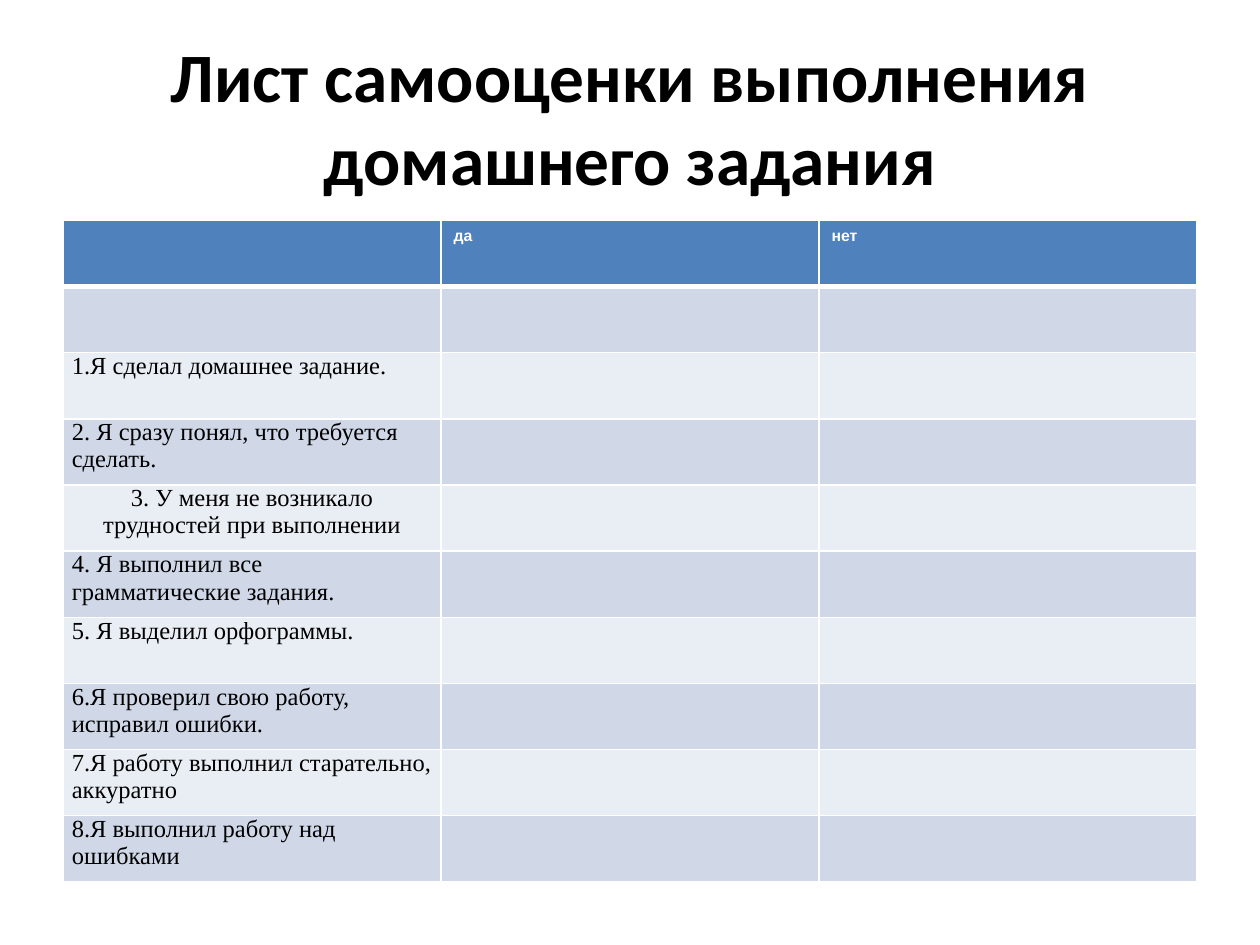
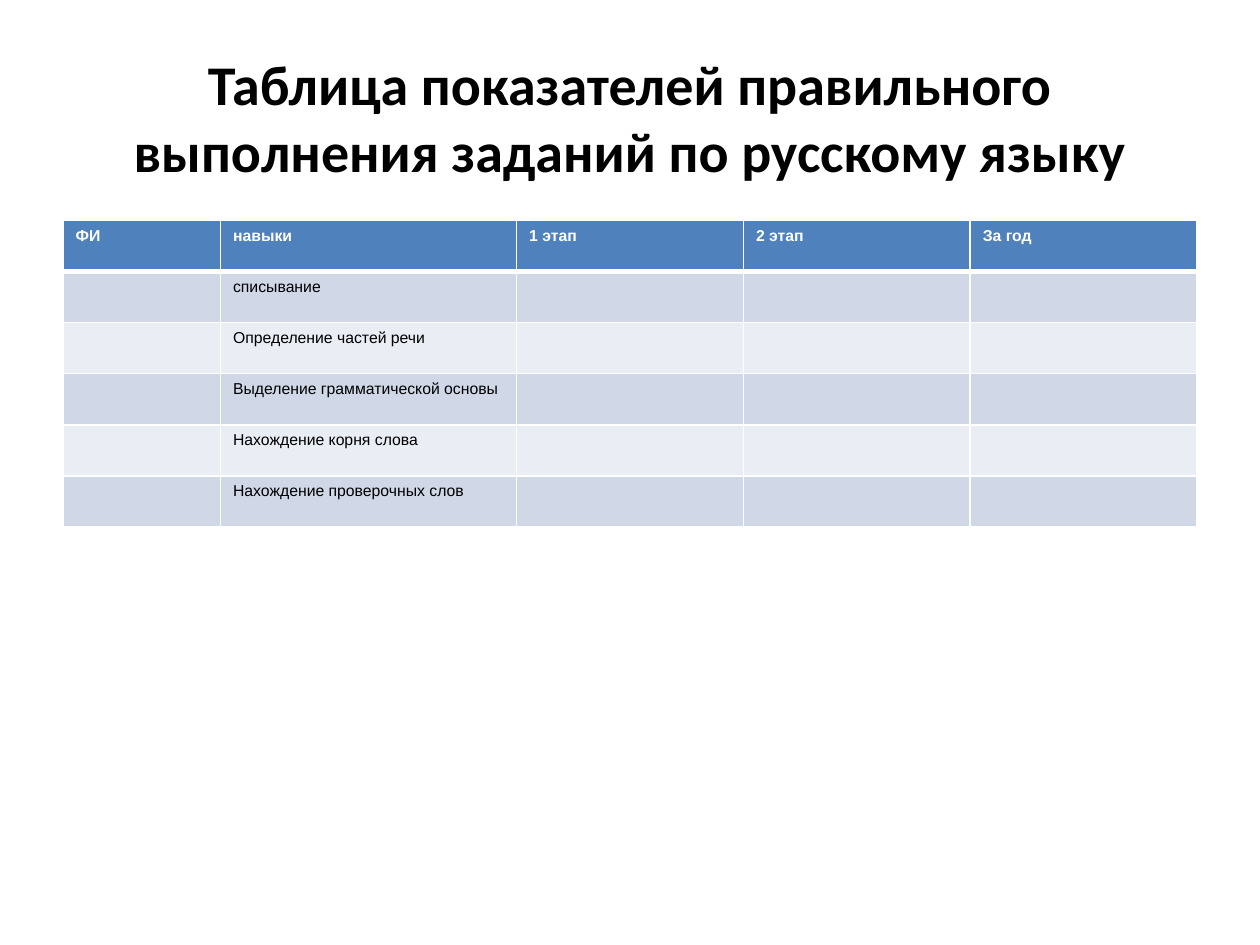
import dataclasses

import lxml.etree
import pptx
import pptx.dml.color
import pptx.enum.text
import pptx.oxml.ns
import pptx.util

Align = pptx.enum.text.PP_ALIGN
Color = pptx.dml.color.RGBColor.from_string
Pt = pptx.util.Pt
Inches = pptx.util.Inches
qn = pptx.oxml.ns.qn


@dataclasses.dataclass(frozen=True)
class Theme:
    white: str = "FFFFFF"
    black: str = "000000"
    head: str = "4F81BD"
    bands: tuple = ("D0D8E8", "E9EDF4")
    thin: float = 1
    thick: float = 3
    title: tuple = ("Calibri", "000000", True)
    label: tuple = ("Arial", "FFFFFF", True)
    plain: tuple = ("Arial", "000000", False)
    serif: tuple = ("Times New Roman", "000000", False)
    small: float = 9
    medium: float = 14
    large: float = 32
    huge: float = 39.6


THEME = Theme()
UNIT = Inches(0.05)
TITLE_BOX = (10, 6, 180, 25)
TABLE_BOX = (10, 35, 180)

CHECKS = [
    "1.Я сделал домашнее задание.",
    "2. Я сразу понял, что требуется сделать.",
    "3. У меня не возникало трудностей при выполнении",
    "4. Я выполнил все грамматические задания.",
    "5. Я выделил орфограммы.",
    "6.Я проверил свою работу, исправил ошибки.",
    "7.Я работу выполнил старательно, аккуратно",
    "8.Я выполнил работу над ошибками",
]
SKILLS = [
    "списывание",
    "Определение частей речи",
    "Выделение грамматической основы",
    "Нахождение корня слова",
    "Нахождение проверочных слов",
]


def units(count):
    return round(count * UNIT)


def assign(item, values):
    for name, value in values.items():
        setattr(item, name, value)


def write(frame, text, style, size, align=None):
    face, color, bold = style
    line = frame.paragraphs[0]
    line.alignment = align
    run = line.add_run()
    run.text = text
    assign(run.font, {"name": face, "size": Pt(size), "bold": bold})
    run.font.color.rgb = Color(color)


def add_title(slide, box, text, size):
    title = slide.shapes.title
    places = map(units, box)
    assign(title, dict(zip(("left", "top", "width", "height"), places)))
    assign(title.text_frame, {
        "word_wrap": True,
        "auto_size": pptx.enum.text.MSO_AUTO_SIZE.NONE,
        "vertical_anchor": pptx.enum.text.MSO_ANCHOR.MIDDLE,
    })
    write(title.text_frame, text, THEME.title, size, Align.CENTER)


def add_edges(cell, top, bottom):
    props = cell._tc.get_or_add_tcPr()
    edges = {"L": THEME.thin, "R": THEME.thin, "T": top, "B": bottom}
    for side, width in edges.items():
        edge = lxml.etree.SubElement(props, qn(f"a:ln{side}"), w=str(Pt(width)))
        fill = lxml.etree.SubElement(edge, qn("a:solidFill"))
        lxml.etree.SubElement(fill, qn("a:srgbClr"), val=THEME.white)


def paint(cell, row):
    top = THEME.thick if row == 1 else THEME.thin
    bottom = THEME.thick if row == 0 else THEME.thin
    add_edges(cell, top, bottom)
    cell.fill.solid()
    color = THEME.bands[(row - 1) % 2] if row else THEME.head
    cell.fill.fore_color.rgb = Color(color)


def add_grid(slide, box, widths, height, heads):
    left, top, width = box
    count = len(heads)
    rows = height[0]
    places = map(units, (left, top, width, rows * height[1]))
    table = slide.shapes.add_table(rows, count, *places).table
    for column, share in zip(table.columns, widths):
        column.width = units(width * share / sum(widths))
    for line in table.rows:
        line.height = units(height[1])
    for row in range(rows):
        for col in range(count):
            paint(table.cell(row, col), row)
    for col, text in enumerate(heads):
        if text:
            write(table.cell(0, col).text_frame, text, THEME.label, THEME.small)
    return table


def add_checks(slide, box):
    size = (len(CHECKS) + 2, 10.5)
    table = add_grid(slide, box, (1, 1, 1), size, ("", "да", "нет"))
    side = Inches(0.07)
    for row, text in enumerate(CHECKS, 2):
        cell = table.cell(row, 0)
        assign(cell, {
            "margin_left": side,
            "margin_right": side,
            "margin_top": 0,
            "margin_bottom": 0,
        })
        align = Align.CENTER if text.startswith("3.") else None
        write(cell.text_frame, text, THEME.serif, THEME.medium, align)


def add_skills(slide, box):
    heads = ("ФИ", "навыки", "1 этап", "2 этап", "За год")
    size = (len(SKILLS) + 1, 8.1)
    table = add_grid(slide, box, (25, 47, 36, 36, 36), size, heads)
    for row, text in enumerate(SKILLS, 1):
        write(table.cell(row, 1).text_frame, text, THEME.plain, THEME.small)


def main():
    deck = pptx.Presentation()
    assign(deck, {"slide_width": units(200), "slide_height": units(150)})
    pages = [
        ("Лист самооценки выполнения домашнего задания",
         THEME.huge, add_checks),
        ("Таблица показателей правильного выполнения заданий по русскому языку",
         THEME.large, add_skills),
    ]
    for text, size, fill in pages:
        slide = deck.slides.add_slide(deck.slide_layouts[5])
        add_title(slide, TITLE_BOX, text, size)
        fill(slide, TABLE_BOX)
    deck.save("out.pptx")


if __name__ == "__main__":
    main()
